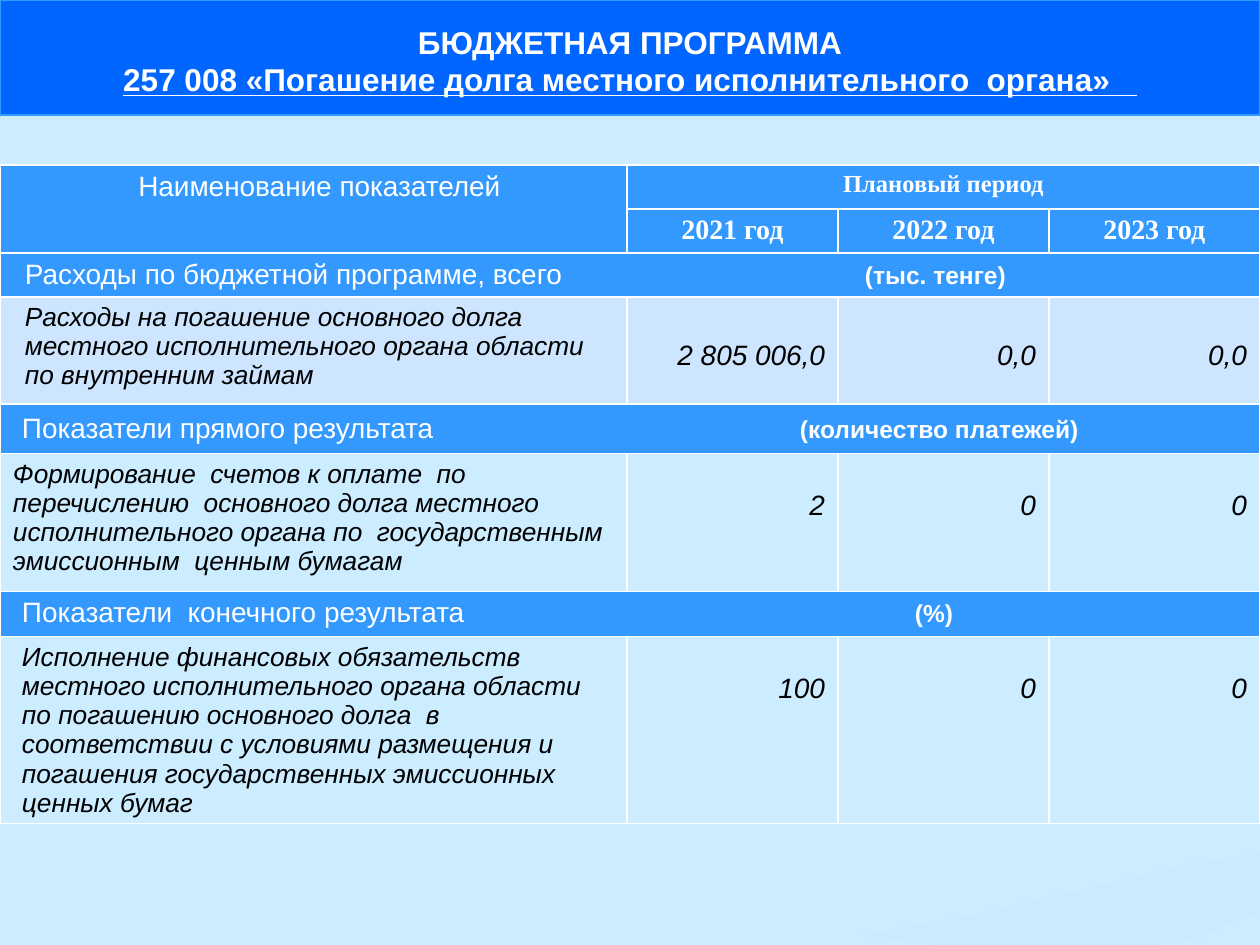
from lxml.etree import SubElement
from pptx import Presentation
from pptx.dml.color import RGBColor
from pptx.enum.shapes import MSO_SHAPE
from pptx.enum.text import MSO_ANCHOR, PP_ALIGN
from pptx.oxml.ns import qn
from pptx.util import Emu, Pt

PX_PER_INCH = 126
COLORS = {
    "background": "CCECFF", "banner": "0066FF", "band": "3399FF",
    "expense": "CDE5FE", "wave": "C6E7FC", "light": "FFFFFF", "dark": "000000",
}
SERIF = "Times New Roman"
COLUMNS = [627, 211, 211, 211]
ROWS = [44, 44, 44, 107, 50, 138, 45, 187]
YEARS = ["2021 год", "2022 год", "2023 год"]

# row, title, unit, left margin, top margin, x of the unit
SECTIONS = [
    (2, "Расходы по бюджетной программе, всего", "(тыс. тенге)", 25, 6, 865),
    (4, "Показатели прямого результата", "(количество платежей)", 22, 10, 800),
    (6, "Показатели  конечного результата", "(%)", 22, 6, 915),
]
# row, indicator, yearly values, fill, left margin, top margin of the values
INDICATORS = [
    (3, "Расходы на погашение основного долга местного исполнительного органа "
        "области по внутренним займам",
     ["2 805 006,0", "0,0", "0,0"], "expense", 25, 43),
    (5, "Формирование  счетов к оплате  по перечислению  основного долга местного "
        "исполнительного органа по  государственным  эмиссионным  ценным бумагам",
     ["2", "0", "0"], None, 13, 37),
    (7, "Исполнение финансовых обязательств местного исполнительного органа области  "
        "по погашению основного долга  в соответствии с условиями размещения и "
        "погашения государственных эмиссионных ценных бумаг",
     ["100", "0", "0"], None, 22, 37),
]
WAVE = [
    (1260, 852), (1242, 856), (1191, 864), (1115, 882), (979, 914), (891, 930),
    (863, 935), (919, 943), (937, 945), (1155, 945), (1191, 940), (1226, 925), (1260, 912),
]


def px(length):
    return Emu(round(length * 914400 / PX_PER_INCH))


def rgb(name):
    return RGBColor.from_string(COLORS[name])


def add_run(paragraph, text, size, color="light", font="Arial",
            bold=False, italic=False, underline=False):
    run = paragraph.add_run()
    run.text = text
    style = run.font
    style.name, style.size = font, Pt(size)
    style.bold, style.italic, style.underline = bold, italic, underline
    style.color.rgb = rgb(color)


def add_wave(slide, points):
    builder = slide.shapes.build_freeform(*points[0], scale=px(1))
    builder.add_line_segments(points[1:], close=True)
    wave = builder.convert_to_shape()
    wave.shadow.inherit = False
    wave.fill.solid()
    wave.fill.fore_color.rgb = rgb("wave")
    wave.line.fill.background()
    color = wave.fill._xPr.find(qn("a:solidFill"))[0]
    SubElement(color, qn("a:alpha"), val="30000")


def add_banner(slide, left, top, width, height):
    banner = slide.shapes.add_shape(
        MSO_SHAPE.RECTANGLE, px(left), px(top), px(width), px(height))
    banner.shadow.inherit = False
    banner.fill.solid()
    banner.fill.fore_color.rgb = rgb("banner")
    banner.line.color.rgb = rgb("band")
    banner.line.width = Pt(0.75)
    frame = banner.text_frame
    frame.word_wrap = True
    frame.vertical_anchor = MSO_ANCHOR.MIDDLE
    frame.margin_top, frame.margin_bottom = px(12), px(6)
    heading = frame.paragraphs[0]
    program = frame.add_paragraph()
    heading.alignment = program.alignment = PP_ALIGN.CENTER
    add_run(heading, "БЮДЖЕТНАЯ ПРОГРАММА", 18, bold=True)
    add_run(program, "257 008 «Погашение долга местного исполнительного  органа»   ",
            18, bold=True, underline=True)


def style_cell(cell, fill):
    """Draw white borders, then fill the cell or leave it clear."""
    properties = cell._tc.get_or_add_tcPr()
    for side in ("lnL", "lnR", "lnT", "lnB"):
        line = SubElement(properties, qn(f"a:{side}"), w=str(Pt(0.96)))
        SubElement(SubElement(line, qn("a:solidFill")), qn("a:srgbClr"), val=COLORS["light"])
    if fill:
        cell.fill.solid()
        cell.fill.fore_color.rgb = rgb(fill)
    else:
        cell.fill.background()


def open_cell(cell, left=13, top=6, align=PP_ALIGN.LEFT):
    """Set the margins of a cell and return its first paragraph."""
    cell.margin_left, cell.margin_top = px(left), px(top)
    cell.margin_right, cell.margin_bottom = px(13), px(6)
    paragraph = cell.text_frame.paragraphs[0]
    paragraph.alignment = align
    return paragraph


def fill_header(table):
    table.cell(0, 0).merge(table.cell(1, 0))
    table.cell(0, 1).merge(table.cell(0, 3))
    add_run(open_cell(table.cell(0, 0), left=25, align=PP_ALIGN.CENTER),
            "Наименование показателей", 16)
    add_run(open_cell(table.cell(0, 1), align=PP_ALIGN.CENTER),
            "Плановый период", 14, font=SERIF, bold=True)
    for column, year in enumerate(YEARS, 1):
        add_run(open_cell(table.cell(1, column), align=PP_ALIGN.CENTER),
                year, 16, font=SERIF, bold=True)


def fill_section(table, row, title, unit, left, top, unit_x):
    table.cell(row, 0).merge(table.cell(row, 3))
    paragraph = open_cell(table.cell(row, 0), left, top)
    tabs = SubElement(paragraph._p.get_or_add_pPr(), qn("a:tabLst"))
    SubElement(tabs, qn("a:tab"), pos=str(px(unit_x - left)), algn="l")
    add_run(paragraph, title + "\t", 16)
    add_run(paragraph, unit, 14, bold=True)


def fill_indicator(table, row, name, values, left, value_top):
    add_run(open_cell(table.cell(row, 0), left), name, 15, "dark", italic=True)
    for column, value in enumerate(values, 1):
        add_run(open_cell(table.cell(row, column), top=value_top, align=PP_ALIGN.RIGHT),
                value, 16, "dark", italic=True)


def add_indicator_table(slide, left, top):
    table = slide.shapes.add_table(
        len(ROWS), len(COLUMNS), px(left), px(top), px(sum(COLUMNS)), px(sum(ROWS))).table
    table.first_row = table.horz_banding = False
    for column, width in zip(table.columns, COLUMNS):
        column.width = px(width)
    for row, height in zip(table.rows, ROWS):
        row.height = px(height)

    fills = {row: fill for row, _, _, fill, _, _ in INDICATORS}
    for index, row in enumerate(table.rows):
        for cell in row.cells:
            style_cell(cell, fills.get(index, "band"))

    fill_header(table)
    for section in SECTIONS:
        fill_section(table, *section)
    for row, name, values, _, margin, value_top in INDICATORS:
        fill_indicator(table, row, name, values, margin, value_top)


def main():
    presentation = Presentation()
    presentation.slide_width, presentation.slide_height = px(1260), px(945)
    slide = presentation.slides.add_slide(presentation.slide_layouts[6])
    slide.background.fill.solid()
    slide.background.fill.fore_color.rgb = rgb("background")
    add_indicator_table(slide, 0, 165)
    add_wave(slide, WAVE)
    add_banner(slide, 0, 0, 1260, 115)
    presentation.save("out.pptx")


if __name__ == "__main__":
    main()
